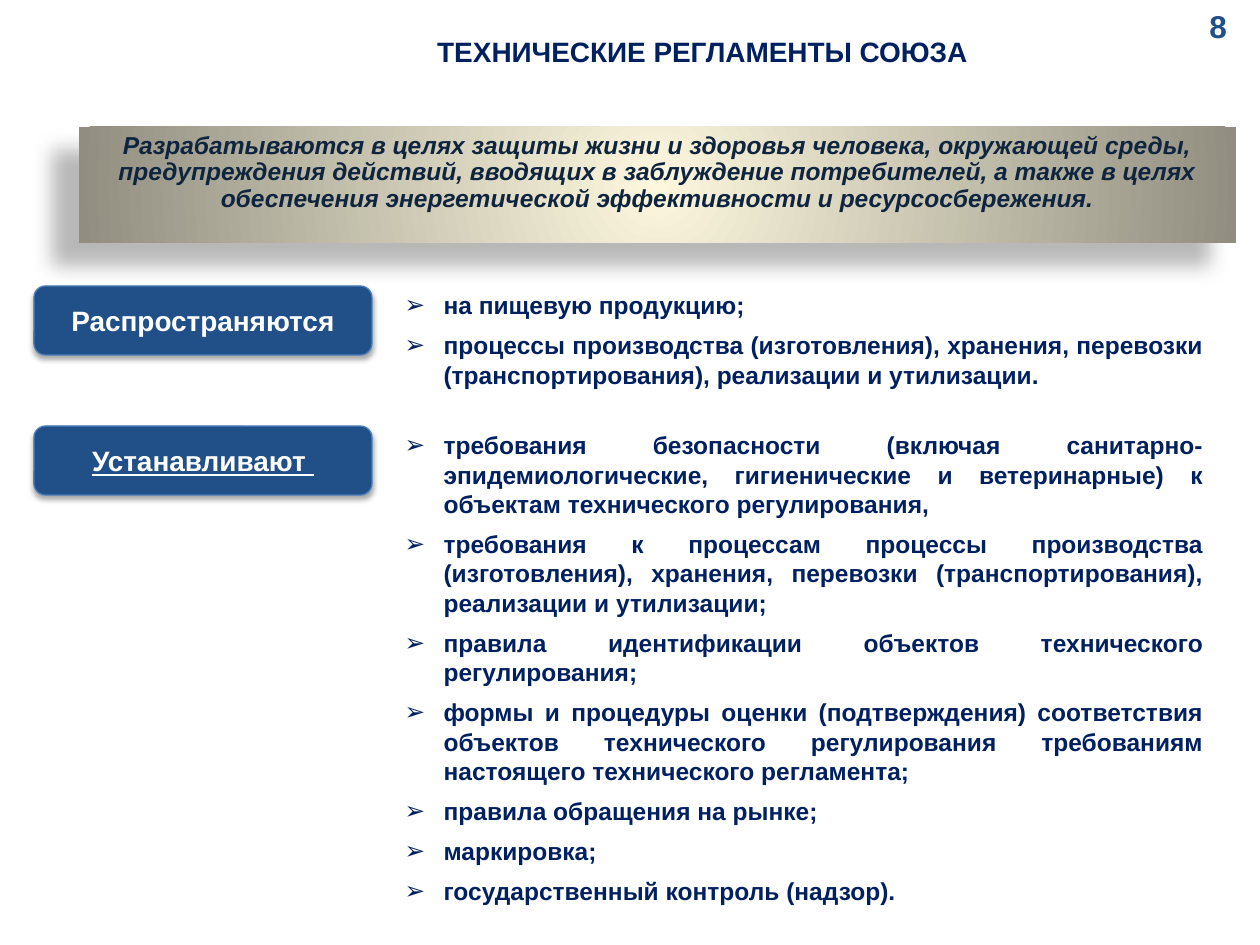
from lxml import etree
from pptx import Presentation
from pptx.dml.color import RGBColor
from pptx.enum.shapes import MSO_SHAPE
from pptx.enum.text import MSO_ANCHOR, MSO_AUTO_SIZE, PP_ALIGN
from pptx.oxml import parse_xml
from pptx.oxml.ns import nsdecls, qn
from pptx.util import Pt

RECT, ROUND = MSO_SHAPE.RECTANGLE, MSO_SHAPE.ROUNDED_RECTANGLE
TOP, MIDDLE = MSO_ANCHOR.TOP, MSO_ANCHOR.MIDDLE
CENTER, JUSTIFY = PP_ALIGN.CENTER, PP_ALIGN.JUSTIFY
NO_FIT = MSO_AUTO_SIZE.NONE

TITLE = "ТЕХНИЧЕСКИЕ РЕГЛАМЕНТЫ СОЮЗА"
NUMBER = "8"
PURPOSE = (
    "Разрабатываются в целях защиты жизни и здоровья человека, окружающей среды, "
    "предупреждения действий, вводящих в заблуждение потребителей, а также в целях "
    "обеспечения энергетической эффективности и ресурсосбережения."
)
# label, underlined, top, list height, items
GROUPS = [
    ("Распространяются", False, 286, 112, [
        "на пищевую продукцию;",
        "процессы производства (изготовления), хранения, перевозки "
        "(транспортирования), реализации и утилизации.",
    ]),
    ("Устанавливают ", True, 426, 572, [
        "требования безопасности (включая санитарно-эпидемиологические, "
        "гигиенические и ветеринарные) к объектам технического регулирования,",
        "требования к процессам процессы производства (изготовления), хранения, "
        "перевозки (транспортирования), реализации и утилизации;",
        "правила идентификации объектов технического регулирования;",
        "формы и процедуры оценки (подтверждения) соответствия объектов "
        "технического регулирования требованиям настоящего технического регламента;",
        "правила обращения на рынке;",
        "маркировка;",
        "государственный контроль (надзор).",
    ]),
]
THEME = {
    "font": "Arial",
    "navy": "002060", "blue": "214F87", "edge": "4B7EBC",
    "ink": "0F243E", "white": "FFFFFF", "shade": "000000",
    "light": "FCF7DD", "dark": "918E81",
    "text": 14, "head": 16, "number": 18,
}
SCALE = 914400 / 126


def px(n):
    return round(n * SCALE)


def color(name):
    return RGBColor.from_string(THEME[name])


def place(shape, left, top, width, height):
    shape.left, shape.top = px(left), px(top)
    shape.width, shape.height = px(width), px(height)


def write(shape, lines, size, ink, align=CENTER, anchor=TOP):
    frame = shape.text_frame
    frame.text = "\n".join(lines)
    frame.word_wrap = True
    frame.auto_size = NO_FIT
    frame.vertical_anchor = anchor
    for para in frame.paragraphs:
        para.alignment = align
        for run in para.runs:
            font = run.font
            font.name, font.size, font.bold = THEME["font"], Pt(THEME[size]), True
            font.color.rgb = color(ink)
    return frame.paragraphs


def bullet(para):
    props = para._p.get_or_add_pPr()
    props.set("marL", str(px(39)))
    props.set("indent", str(-px(39)))
    etree.SubElement(props, qn("a:buFont"), typeface=THEME["font"])
    etree.SubElement(props, qn("a:buChar"), char="➢")


def shadow(shape, alpha, blur, dist, angle):
    shape.shadow.inherit = False
    effects = shape._element.spPr.find(qn("a:effectLst"))
    effects.append(parse_xml(
        f'<a:outerShdw {nsdecls("a")} blurRad="{Pt(blur)}" dist="{Pt(dist)}" '
        f'dir="{angle * 60000}" algn="ctr" rotWithShape="0">'
        f'<a:srgbClr val="{THEME["shade"]}"><a:alpha val="{alpha * 1000}"/></a:srgbClr>'
        "</a:outerShdw>"))


def glow(shape):
    """Fill the shape with a circular gradient, light in the middle."""
    shape.fill.gradient()
    old = shape._element.spPr.find(qn("a:gradFill"))
    stops = "".join(
        f'<a:gs pos="{pos}"><a:srgbClr val="{THEME[name]}"/></a:gs>'
        for pos, name in ((0, "light"), (100000, "dark")))
    old.getparent().replace(old, parse_xml(
        f'<a:gradFill {nsdecls("a")} rotWithShape="1"><a:gsLst>{stops}</a:gsLst>'
        '<a:path path="circle">'
        '<a:fillToRect l="50000" t="50000" r="50000" b="50000"/></a:path></a:gradFill>'))


def main():
    deck = Presentation()
    deck.slide_width, deck.slide_height = px(1260), px(945)
    slide = deck.slides.add_slide(deck.slide_layouts[3])
    shapes = slide.shapes
    title, *bodies = slide.placeholders

    for body, (label, under, top, height, items) in zip(bodies, GROUPS):
        place(body, 392, top - 2, 824, height)
        for i, para in enumerate(write(body, items, "text", "navy", JUSTIFY)):
            para.space_before = Pt(6 if i else 0)
            bullet(para)

        box = shapes.add_shape(ROUND, px(34), px(top), px(338), px(69))
        box.fill.solid()
        box.fill.fore_color.rgb = color("blue")
        box.line.color.rgb = color("edge")
        box.line.width = Pt(0.75)
        shadow(box, 35, 3.1, 1.8, 90)
        para = write(box, [label], "head", "white", anchor=MIDDLE)[0]
        para.runs[0].font.underline = under

    number = shapes.add_textbox(px(1176), px(1), px(84), px(53))
    write(number, [NUMBER], "number", "blue")

    place(title, 169, 13, 1067, 77)
    write(title, [TITLE], "head", "navy", anchor=MIDDLE)

    banner = shapes.add_shape(RECT, px(79), px(127), px(1157), px(116))
    glow(banner)
    banner.line.fill.background()
    shadow(banner, 28, 11.8, 19.7, 141)
    para = write(banner, [PURPOSE], "text", "ink")[0]
    para.line_spacing = 0.9
    para.runs[0].font.italic = True

    deck.save("out.pptx")


if __name__ == "__main__":
    main()
